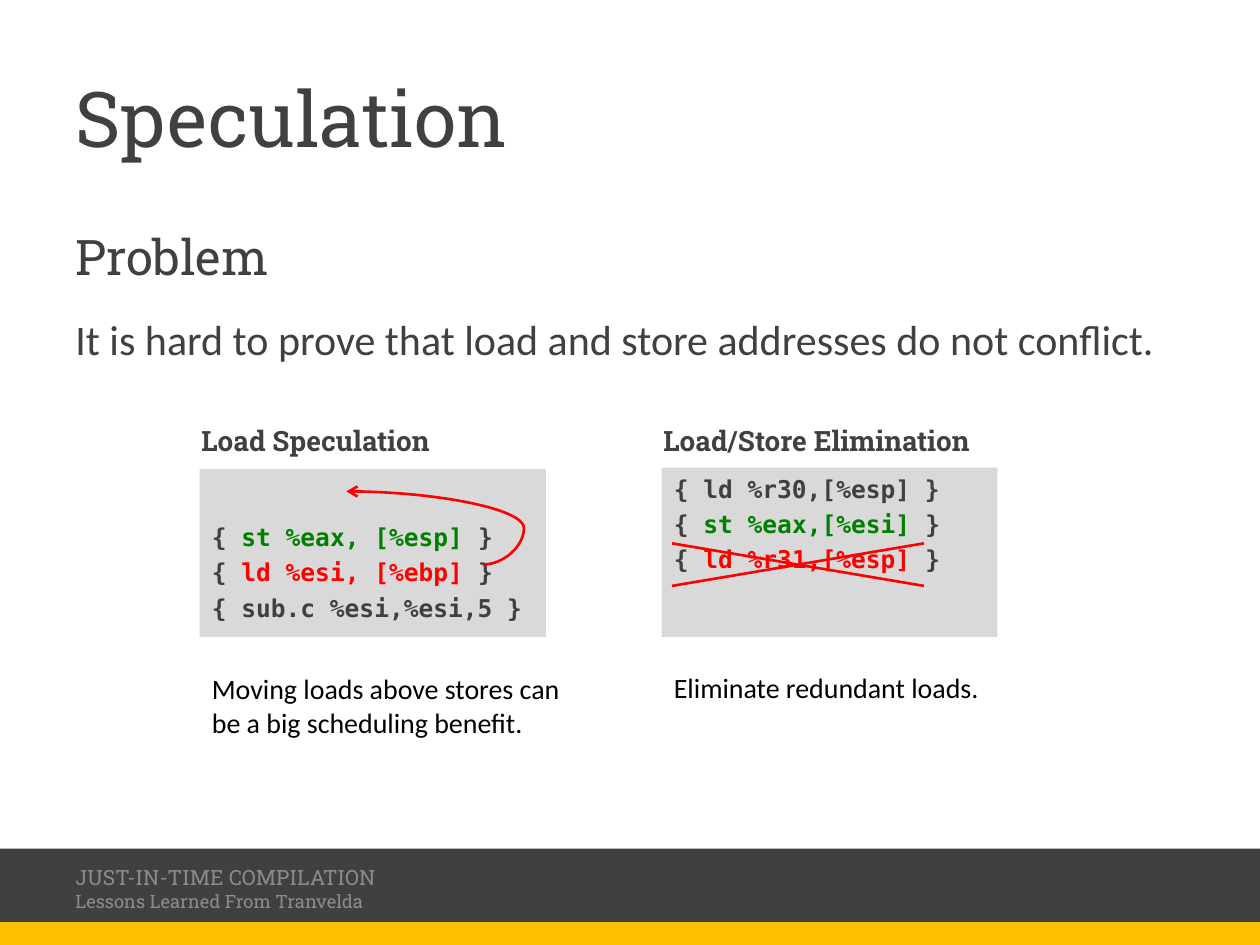
from dataclasses import dataclass

import pptx
import pptx.util
from lxml import etree
from pptx.dml.color import RGBColor
from pptx.enum.shapes import MSO_CONNECTOR, MSO_SHAPE
from pptx.enum.text import MSO_ANCHOR, PP_ALIGN
from pptx.oxml.ns import qn

Pt = pptx.util.Pt
COLORS = {
    "dark": "404040", "accent": "FFC000", "muted": "8C8C8C", "panel": "D9D9D9",
    "store": "008000", "load": "FF0000", "black": "000000",
}
SLAB, SANS, MONO = "Roboto Slab", "Calibri", "DejaVu Sans Mono"


@dataclass
class Box:
    left: float
    top: float
    width: float
    height: float

    def lengths(self) -> list:
        return [Pt(v) for v in (self.left, self.top, self.width, self.height)]


@dataclass
class CodeExample:
    heading: str
    heading_box: Box
    lines: list  # each line is a list of (text, color) pieces
    panel: Box
    top_inset: float
    line_spacing: float
    gap: float
    caption: str
    caption_box: Box


def rgb(color: str) -> RGBColor:
    return RGBColor.from_string(COLORS[color])


def write(paragraph, text: str, *, size: float, font: str = SLAB,
          color: str = "dark", bold: bool = False, before: float = 0,
          spacing: float = 1.0) -> None:
    """Append one formatted run to a left-aligned paragraph."""
    paragraph.alignment = PP_ALIGN.LEFT
    paragraph.space_before = Pt(before)
    paragraph.line_spacing = spacing
    run = paragraph.add_run()
    run.text = text
    run.font.size, run.font.name, run.font.bold = Pt(size), font, bold
    run.font.color.rgb = rgb(color)


def add_text_box(slide, box: Box, wrap: bool = True, anchor=MSO_ANCHOR.TOP):
    frame = slide.shapes.add_textbox(*box.lengths()).text_frame
    frame.word_wrap = wrap
    frame.vertical_anchor = anchor
    return frame


def add_panel(slide, box: Box, color: str):
    panel = slide.shapes.add_shape(MSO_SHAPE.RECTANGLE, *box.lengths())
    panel.shadow.inherit = False
    panel.fill.solid()
    panel.fill.fore_color.rgb = rgb(color)
    panel.line.fill.background()
    return panel


def add_red_line(slide, kind, start: tuple, end: tuple):
    line = slide.shapes.add_connector(kind, *(Pt(v) for v in start + end))
    line.line.color.rgb = rgb("load")
    line.line.width = Pt(1.5)
    etree.SubElement(line._element.spPr, qn("a:effectLst"))
    return line


def add_move_arrow(slide, start: tuple, end: tuple, bulge: int) -> None:
    """Draw a curved arrow that bulges past its start, in 1/1000 percent."""
    arrow = add_red_line(slide, MSO_CONNECTOR.CURVE, start, end)
    guides = arrow._element.spPr.find(qn("a:prstGeom")).find(qn("a:avLst"))
    etree.SubElement(guides, qn("a:gd"), name="adj1", fmla=f"val {bulge}")
    outline = arrow._element.spPr.find(qn("a:ln"))
    etree.SubElement(outline, qn("a:tailEnd"), type="arrow")


def add_code_example(slide, example: CodeExample) -> None:
    frame = add_panel(slide, example.panel, "panel").text_frame
    frame.word_wrap = True
    frame.vertical_anchor = MSO_ANCHOR.TOP
    frame.margin_top = Pt(example.top_inset)
    for i, pieces in enumerate(example.lines):
        paragraph = frame.add_paragraph() if i else frame.paragraphs[0]
        for text, color in pieces:
            write(paragraph, text, size=14, font=MONO, color=color, bold=True,
                  before=example.gap if i else 0, spacing=example.line_spacing)
    heading = add_text_box(slide, example.heading_box, wrap=False)
    write(heading.paragraphs[0], example.heading, size=16, bold=True)
    caption = add_text_box(slide, example.caption_box)
    write(caption.paragraphs[0], example.caption, size=16, font=SANS, color="black")


def bundle(instruction: str, color: str) -> list:
    return [("{ ", "dark"), (instruction + " ", color), ("}", "dark")]


EXAMPLES = [
    CodeExample(
        "Load Speculation", Box(108, 238.3, 150.5, 26.6),
        [bundle("st %eax, [%esp]", "store"), bundle("ld %esi, [%ebp]", "load"),
         bundle("sub.c %esi,%esi,5", "dark")],
        Box(114, 268, 198, 96), 27, 1.2, 0,
        "Moving loads above stores can be a big scheduling benefit.",
        Box(114, 380.2, 216, 46)),
    CodeExample(
        "Load/Store Elimination", Box(372, 238.7, 205, 26.6),
        [bundle("ld %r30,[%esp]", "dark"), bundle("st %eax,[%esi]", "store"),
         bundle("ld %r31,[%esp]", "load")],
        Box(378, 267.2, 192, 96.8), 3.6, 1.0, 3.3,
        "Eliminate redundant loads.", Box(378, 379.4, 198, 26.6)),
]


def main() -> None:
    deck = pptx.Presentation()
    deck.slide_width, deck.slide_height = Pt(720), Pt(540)
    slide = deck.slides.add_slide(deck.slide_layouts[5])

    # Footer bands and text
    add_panel(slide, Box(0, 485, 720, 55), "dark")
    add_panel(slide, Box(0, 527, 720, 13), "accent")
    footer = add_text_box(slide, Box(36, 493.2, 437.8, 28.8), anchor=MSO_ANCHOR.MIDDLE)
    write(footer.paragraphs[0], "JUST-IN-TIME COMPILATION", size=12, color="muted")
    write(footer.add_paragraph(), "Lessons Learned From Tranvelda", size=10.5, color="muted")

    # Title
    title = slide.shapes.title
    title.left, title.top, title.width, title.height = Box(36, 21.6, 648, 90).lengths()
    title.text_frame.vertical_anchor = MSO_ANCHOR.MIDDLE
    write(title.text_frame.paragraphs[0], "Speculation", size=44)

    # Problem statement
    problem = add_text_box(slide, Box(36, 126, 648, 100))
    write(problem.paragraphs[0], "Problem", size=28)
    write(problem.add_paragraph(),
          "It is hard to prove that load and store addresses do not conflict.",
          size=24, font=SANS, before=16)

    # Code examples
    for example in EXAMPLES:
        add_code_example(slide, example)

    # Load moved above the store, and the crossed-out redundant load
    add_move_arrow(slide, (276, 322.6), (198, 280.8), -30100)
    left, right, top, bottom = 384, 528, 310.5, 334.8
    add_red_line(slide, MSO_CONNECTOR.STRAIGHT, (left, bottom), (right, top))
    add_red_line(slide, MSO_CONNECTOR.STRAIGHT, (left, top), (right, bottom))

    deck.save("out.pptx")


if __name__ == "__main__":
    main()
